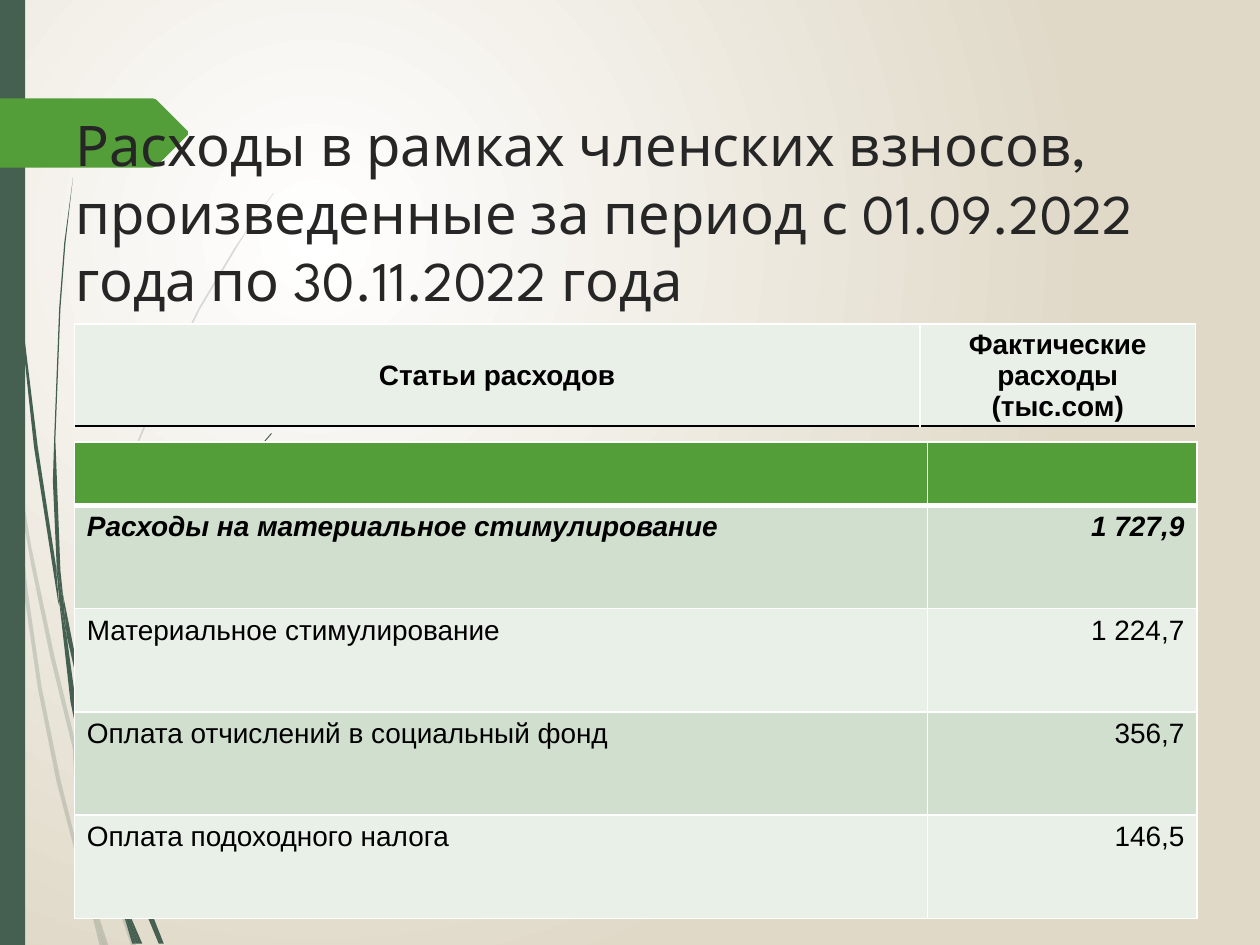
from lxml import etree
from pptx import Presentation
from pptx import util as u
from pptx.dml.color import RGBColor
from pptx.enum import shapes, text
from pptx.oxml.ns import qn

WHITE = RGBColor(0xFF, 0xFF, 0xFF)
BLACK = RGBColor(0, 0, 0)
SAND = RGBColor(0xE0, 0xD9, 0xC8)
PINE = RGBColor(0x45, 0x5F, 0x51)
GREEN = RGBColor(0x54, 0x9E, 0x39)
MINT = RGBColor(0xD1, 0xDF, 0xCE)
PALE = RGBColor(0xE9, 0xF0, 0xE8)
INK = RGBColor(0x26, 0x26, 0x26)

FAINT_BLADES = [
    [(0.08, 3.5), (0.06, 3.22), (0, 2.82), (0, 2.99), (0.07, 3.44)],
    [(0.4, 5.22), (0.59, 5.99), (0.59, 5.86), (0.43, 5.2), (0.25, 4.35), (0.1, 3.45),
     (0.12, 3.76), (0.25, 4.5)],
    [(0.64, 6.07), (0.61, 5.96), (0.61, 6.1), (0.85, 6.94), (1.04, 7.5), (1.08, 7.5),
     (0.88, 6.92)],
    [(0.83, 7.5), (0.86, 7.5), (0.73, 7.11)],
    [(0.64, 6.83), (0.48, 6.19), (0.33, 5.45), (0.22, 4.69), (0.12, 3.76), (0.08, 3.5),
     (0.19, 4.7), (0.3, 5.46), (0.45, 6.21), (0.64, 6.93), (0.7, 7.14), (0.69, 7.07)],
    [(0.58, 5.99), (0.6, 6.46), (0.64, 6.83), (0.67, 6.92), (0.73, 7.11), (0.72, 7.06),
     (0.63, 6.46), (0.61, 6.1), (0.61, 6.08)],
    [(0.61, 5.84), (0.65, 5.22), (0.76, 4.62), (0.92, 4.05), (1.11, 3.49), (1.34, 2.95),
     (1.59, 2.45), (1.87, 1.98), (2.01, 1.75), (2.17, 1.54), (2.17, 1.53), (2.01, 1.75),
     (1.86, 1.97), (1.58, 2.44), (1.33, 2.94), (1.1, 3.48), (0.91, 4.03), (0.75, 4.61),
     (0.63, 5.22), (0.59, 5.84), (0.59, 5.86), (0.61, 5.96)],
    [(0.7, 7.14), (0.79, 7.5), (0.82, 7.5)],
    [(0.61, 6.08), (0.61, 6.1), (0.61, 5.96), (0.59, 5.86), (0.58, 5.99)],
    [(0.67, 6.92), (0.65, 6.83), (0.69, 7.07), (0.7, 7.14), (0.82, 7.5), (0.83, 7.5),
     (0.73, 7.11)],
]
DARK_BLADES = [
    [(0.05, 1.1), (0.14, 2.33), (0.27, 3.55), (0.46, 4.77), (0.47, 4.81), (0.45, 4.57),
     (0.45, 4.53), (0.3, 3.55), (0.15, 2.32), (0.06, 1.09), (0.04, 0.48), (0.03, 0),
     (0.02, 0), (0.03, 0.48)],
    [(0.73, 5.92), (0.88, 6.45), (0.88, 6.33), (0.88, 6.31), (0.77, 5.9), (0.62, 5.32),
     (0.5, 4.72), (0.53, 5.05)],
    [(0.94, 6.49), (0.91, 6.41), (0.91, 6.56), (1.09, 7.08), (1.26, 7.49), (1.3, 7.49),
     (1.13, 7.06)],
    [(0.91, 6.91), (0.81, 6.57), (0.6, 5.56), (0.53, 5.05), (0.47, 4.77), (0.56, 5.57),
     (0.77, 6.59), (0.92, 7.08), (0.97, 7.22), (0.96, 7.17)],
    [(0.5, 4.72), (0.48, 4.53), (0.44, 3.49), (0.48, 2.45), (0.52, 1.93), (0.58, 1.41),
     (0.51, 1.93), (0.47, 2.45), (0.43, 3.49), (0.42, 3.82), (0.45, 4.49), (0.49, 4.72)],
    [(1.1, 7.49), (1.13, 7.49), (1, 7.19)],
    [(0.47, 4.77), (0.53, 5.05), (0.5, 4.72), (0.49, 4.72), (0.45, 4.49), (0.45, 4.53)],
    [(0.91, 6.33), (0.94, 5.92), (1.03, 5.52), (1.16, 5.13), (1.31, 4.76), (1.49, 4.4),
     (1.69, 4.06), (1.91, 3.74), (2.03, 3.59), (2.16, 3.44), (2.15, 3.44), (2.03, 3.58),
     (1.91, 3.73), (1.68, 4.05), (1.48, 4.39), (1.29, 4.74), (1.14, 5.12), (1.01, 5.51),
     (0.92, 5.91), (0.88, 6.31), (0.91, 6.41)],
    [(0.97, 7.22), (1.05, 7.49), (1.08, 7.49)],
    [(0.88, 6.45), (0.91, 6.91), (0.96, 7.06), (1, 7.19), (1, 7.16), (0.91, 6.56),
     (0.9, 6.51)],
    [(0.88, 6.45), (0.9, 6.51), (0.91, 6.56), (0.91, 6.41), (0.88, 6.31), (0.88, 6.33)],
    [(0.96, 7.06), (0.91, 6.91), (0.96, 7.17), (0.97, 7.22), (1.08, 7.49), (1.1, 7.49),
     (1, 7.19)],
]
ARROW = [(0, 0.78), (1.21, 0.78), (1.24, 0.79), (1.49, 1.04), (1.49, 1.07),
         (1.24, 1.32), (1.21, 1.33), (0, 1.33)]

TITLE = ("Расходы в рамках членских взносов, произведенные за период "
         "с 01.09.2022 года по 30.11.2022 года")
HEADINGS = ["Статьи расходов", "Фактические расходы\n(тыс.сом)"]
EXPENSES = [
    ("Расходы на материальное стимулирование", "1 727,9"),
    ("Материальное стимулирование", "1 224,7"),
    ("Оплата отчислений в социальный фонд", "356,7"),
    ("Оплата подоходного налога", "146,5"),
]


def paint_background(slide):
    fill = slide.background.fill
    fill.gradient()
    for stop, color in zip(fill.gradient_stops, (WHITE, SAND)):
        stop.color.rgb = color
    gradient = slide.element.find(".//" + qn("a:gradFill"))
    gradient.remove(gradient.find(qn("a:lin")))
    circle = etree.SubElement(gradient, qn("a:path"), path="circle")
    etree.SubElement(circle, qn("a:fillToRect"),
                     l="50000", t="50000", r="100000", b="100000")


def paint_shape(shape, color):
    shape.shadow.inherit = False
    shape.fill.solid()
    shape.fill.fore_color.rgb = color
    shape.line.fill.background()


def add_outline(slide, points, color, alpha=None):
    corners = [(u.Inches(x), u.Inches(y)) for x, y in points]
    builder = slide.shapes.build_freeform(*corners[0])
    builder.add_line_segments(corners[1:], close=True)
    shape = builder.convert_to_shape()
    paint_shape(shape, color)
    if alpha:
        tint = shape.element.spPr.find(qn("a:solidFill")).find(qn("a:srgbClr"))
        etree.SubElement(tint, qn("a:alpha"), val=str(alpha * 1000))


def add_bar(slide):
    bar = slide.shapes.add_shape(shapes.MSO_SHAPE.RECTANGLE, 0, 0,
                                 u.Inches(0.2), u.Inches(7.5))
    paint_shape(bar, PINE)


def format_span(span, size, font, color, bold=False, italic=False):
    span.font.size = u.Pt(size)
    span.font.name = font
    span.font.color.rgb = color
    span.font.bold = bold
    span.font.italic = italic


def add_title(slide):
    box = slide.shapes.add_textbox(u.Inches(0.5), u.Inches(0.3),
                                   u.Inches(9), u.Inches(0.77))
    frame = box.text_frame
    frame.word_wrap = True
    frame.margin_top = u.Inches(0.58)
    frame.text = TITLE
    format_span(frame.paragraphs[0].runs[0], 32, "League Spartan", INK)


def add_grid(slide, left, top, widths, heights, total_height):
    frame = slide.shapes.add_table(len(heights), len(widths), u.Inches(left), u.Inches(top),
                                   u.Inches(sum(widths)), u.Inches(total_height))
    table = frame.table
    for column, width in zip(table.columns, widths):
        column.width = u.Inches(width)
    for row, height in zip(table.rows, heights):
        row.height = u.Inches(height)
    frame.height = u.Inches(total_height)
    return table


def style_cell(cell, fill, bottom=(WHITE, 1)):
    cell.fill.solid()
    cell.fill.fore_color.rgb = fill
    properties = cell._tc.get_or_add_tcPr()
    edges = {"lnL": (WHITE, 1), "lnR": (WHITE, 1), "lnT": (WHITE, 1), "lnB": bottom}
    for index, (edge, (color, width)) in enumerate(edges.items()):
        line = etree.Element(qn("a:" + edge), w=str(u.Pt(width)))
        solid = etree.SubElement(line, qn("a:solidFill"))
        etree.SubElement(solid, qn("a:srgbClr"), val=str(color))
        properties.insert(index, line)


def write_cell(cell, words, align, bold=False, italic=False):
    cell.text_frame.text = words
    for para in cell.text_frame.paragraphs:
        para.alignment = align
        for span in para.runs:
            format_span(span, 16, "Arial", BLACK, bold, italic)


def add_heading_table(slide):
    table = add_grid(slide, 0.59, 2.57, [6.71, 2.19], [0.5], 0.81)
    for cell, words in zip(table.rows[0].cells, HEADINGS):
        style_cell(cell, PALE, (BLACK, 1))
        cell.margin_left = cell.margin_right = cell.margin_top = u.Inches(0.01)
        cell.margin_bottom = 0
        cell.vertical_anchor = text.MSO_ANCHOR.MIDDLE
        write_cell(cell, words, text.PP_ALIGN.CENTER, bold=True)


def add_expense_table(slide):
    table = add_grid(slide, 0.59, 3.51, [6.77, 2.14], [0.5] + [0.82] * len(EXPENSES), 3.78)
    for cell in table.rows[0].cells:
        style_cell(cell, GREEN, (WHITE, 3))
    aligns = (text.PP_ALIGN.LEFT, text.PP_ALIGN.RIGHT)
    for number, expense in enumerate(EXPENSES):
        total = number == 0
        for cell, words, align in zip(table.rows[number + 1].cells, expense, aligns):
            style_cell(cell, PALE if number % 2 else MINT)
            write_cell(cell, words, align, total, total)


def main():
    deck = Presentation()
    deck.slide_width, deck.slide_height = u.Inches(10), u.Inches(7.5)
    slide = deck.slides.add_slide(deck.slide_layouts[6])
    paint_background(slide)
    for blade in FAINT_BLADES:
        add_outline(slide, blade, PINE, alpha=20)
    for blade in DARK_BLADES:
        add_outline(slide, blade, PINE)
    add_bar(slide)
    add_outline(slide, ARROW, GREEN)
    add_title(slide)
    add_heading_table(slide)
    add_expense_table(slide)
    deck.save("out.pptx")


if __name__ == "__main__":
    main()
